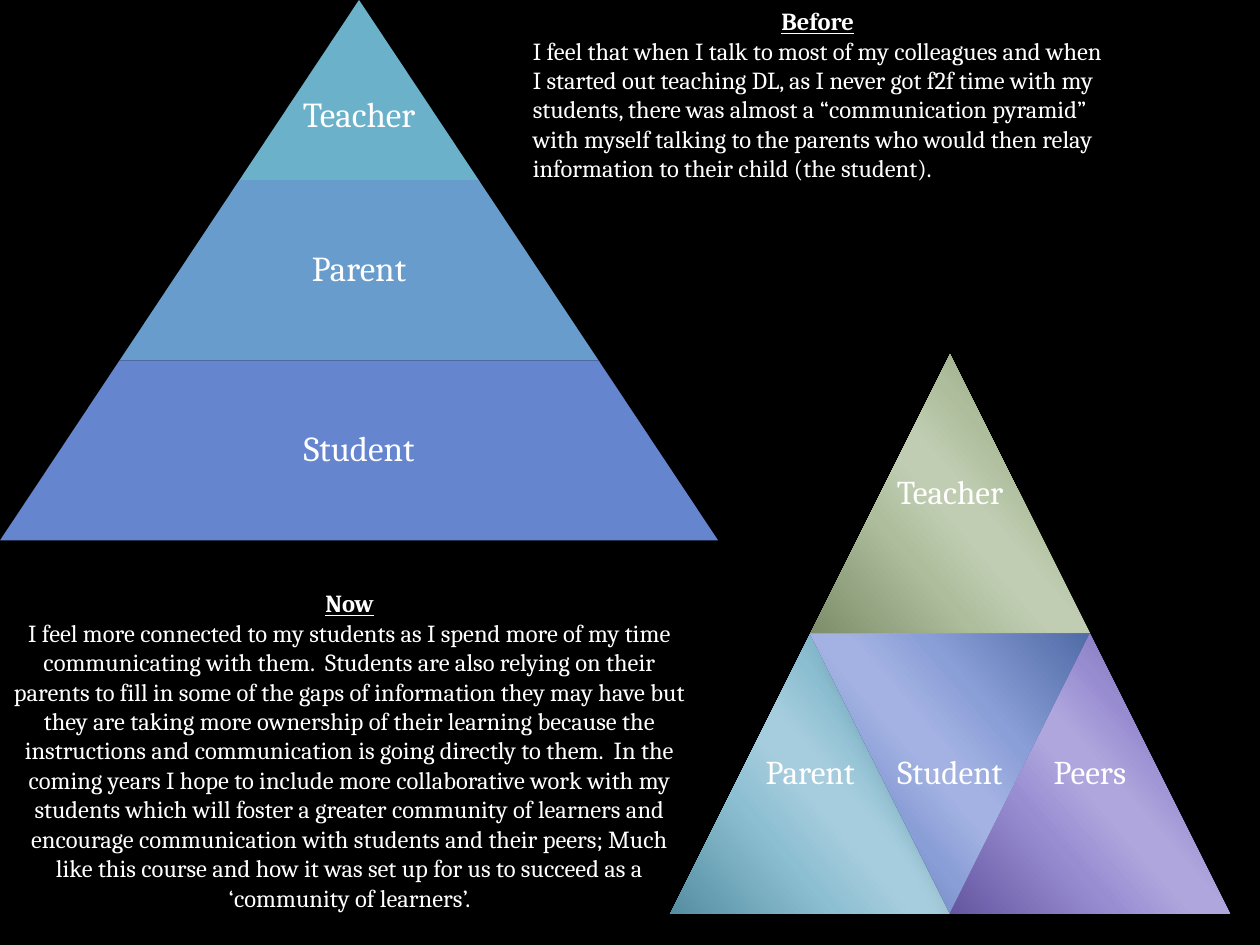
from dataclasses import dataclass

from lxml.etree import SubElement
from pptx import Presentation
from pptx.dml.color import RGBColor
from pptx.enum.shapes import MSO_SHAPE as Shape
from pptx.enum.text import MSO_ANCHOR as Anchor, MSO_AUTO_SIZE as Fit, PP_ALIGN as Align
from pptx.oxml.ns import qn
from pptx.util import Inches, Pt


@dataclass(frozen=True)
class Theme:
    """Colours and type sizes of the slide."""
    font: str = "Cambria"
    back: str = "000000"
    ink: str = "FFFFFF"
    tier: int = 20
    cell: int = 19
    note: int = 14
    stops: tuple = (0, 33, 47, 53, 68, 100)
    blues: tuple = ("6BB1C9", "689CCC", "6585CF")
    green: tuple = ("7D8D6A", "AEBD9C", "C0CDB2", "C0CDB2", "AEBE9D", "7D8D6A")
    teal: tuple = ("568EA1", "8CBED1", "A6CDDD", "A6CDDD", "8DBFD2", "568EA1")
    blue: tuple = ("516BA6", "899DD6", "A3B2E2", "A3B2E2", "8A9ED7", "516BA6")
    violet: tuple = ("6556A1", "988CD1", "AFA6DD", "AFA6DD", "998DD2", "6556A1")


THEME = Theme()
BEFORE = (
    "I feel that when I talk to most of my colleagues and when I started out teaching DL, "
    "as I never got f2f time with my students, there was almost a “communication pyramid” "
    "with myself talking to the parents who would then relay information to their child "
    "(the student)."
)
NOW = (
    "I feel more connected to my students as I spend more of my time communicating with "
    "them.  Students are also relying on their parents to fill in some of the gaps of "
    "information they may have but they are taking more ownership of their learning because "
    "the instructions and communication is going directly to them.  In the coming years I "
    "hope to include more collaborative work with my students which will foster a greater "
    "community of learners and encourage communication with students and their peers; Much "
    "like this course and how it was set up for us to succeed as a ‘community of learners’."
)


def style(para, size, align=Align.CENTER, head=False):
    """Format one paragraph and its runs."""
    para.alignment = align
    for run in para.runs:
        font = run.font
        font.name, font.size = THEME.font, Pt(size)
        font.bold = font.underline = head
        font.color.rgb = RGBColor.from_string(THEME.ink)


def outline(group, kind, box):
    """Add a preset shape without line or inherited shadow."""
    shape = group.shapes.add_shape(kind, *map(Inches, box))
    shape.shadow.inherit = False
    shape.line.fill.background()
    return shape


def label(group, text, box, size, inset, drop=0):
    """Add a centred caption, lowered by the given drop."""
    frame = group.shapes.add_textbox(*map(Inches, box)).text_frame
    frame.word_wrap, frame.vertical_anchor = True, Anchor.MIDDLE
    frame.margin_left = frame.margin_right = frame.margin_bottom = Inches(inset)
    frame.margin_top = Inches(inset + 2 * drop)
    frame.text = text
    para = frame.paragraphs[0]
    para.line_spacing = 0.9
    style(para, size)


def tint(parent, value):
    """Add an RGB colour element."""
    return SubElement(parent, qn("a:srgbClr"), val=value)


def blend(shape, colors):
    """Fill a shape with a diagonal gradient and cast a soft shadow."""
    shape.fill.gradient()
    grad = shape.element.spPr.find(qn("a:gradFill"))
    for child in list(grad):
        grad.remove(child)
    stops = SubElement(grad, qn("a:gsLst"))
    for pos, color in zip(THEME.stops, colors):
        tint(SubElement(stops, qn("a:gs"), pos=str(pos * 1000)), color)
    SubElement(grad, qn("a:lin"), ang=str(139 * 60000), scaled="1")
    glow = SubElement(
        shape.element.spPr.find(qn("a:effectLst")), qn("a:outerShdw"),
        blurRad=str(Pt(15)), dist=str(Pt(18)), dir=str(45 * 60000),
        sy="90000", algn="bl", rotWithShape="0")
    SubElement(tint(glow, THEME.back), qn("a:alpha"), val="26000")


def pyramid(slide, names, step=0.95, high=1.43):
    """Stack trapezoids that widen by two steps per tier."""
    group = slide.shapes.add_group_shape()
    for row, (name, color) in enumerate(zip(names, THEME.blues)):
        left, top, wide = (len(names) - 1 - row) * step, row * high, 2 * step * (row + 1)
        tier = outline(group, Shape.TRAPEZOID, (left, top, wide, high))
        tier.adjustments[0] = step / high
        tier.fill.solid()
        tier.fill.fore_color.rgb = RGBColor.from_string(color)
        pad = 0.175 * wide if row else 0
        box = (left + pad, top, wide - 2 * pad, high)
        label(group, name, box, THEME.tier, 0.03, 0 if row else 0.21)


def mosaic(slide, cells, left=5.32, top=2.81, side=2.22):
    """Place triangles on a grid of half-width columns."""
    group = slide.shapes.add_group_shape()
    for name, col, row, turn, colors in cells:
        box = (left + col * side / 2, top + row * side, side, side)
        cell = outline(group, Shape.ISOSCELES_TRIANGLE, box)
        cell.rotation = turn
        blend(cell, colors)
        label(group, name, box, THEME.cell, 0.08)


def note(slide, head, body, box, align):
    """Add a headed passage of text."""
    frame = slide.shapes.add_textbox(*map(Inches, box)).text_frame
    frame.word_wrap, frame.auto_size = True, Fit.SHAPE_TO_FIT_TEXT
    frame.text = head
    style(frame.paragraphs[0], THEME.note, head=True)
    para = frame.add_paragraph()
    para.text = body
    style(para, THEME.note, align)


def main():
    """Build and save the slide."""
    deck = Presentation()
    deck.slide_width, deck.slide_height = Inches(10), Inches(7.5)
    slide = deck.slides.add_slide(deck.slide_layouts[6])
    slide.background.fill.solid()
    slide.background.fill.fore_color.rgb = RGBColor.from_string(THEME.back)
    pyramid(slide, ("Teacher", "Parent", "Student"))
    mosaic(slide, (
        ("Teacher", 1, 0, 0, THEME.green),
        ("Parent", 0, 1, 0, THEME.teal),
        ("Student", 1, 1, 180, THEME.blue),
        ("Peers", 2, 1, 0, THEME.violet),
    ))
    note(slide, "Before", BEFORE, (4.13, 0, 4.72, 1.75), Align.LEFT)
    note(slide, "Now", NOW, (0, 4.62, 5.55, 2.69), Align.CENTER)
    deck.save("out.pptx")


if __name__ == "__main__":
    main()
